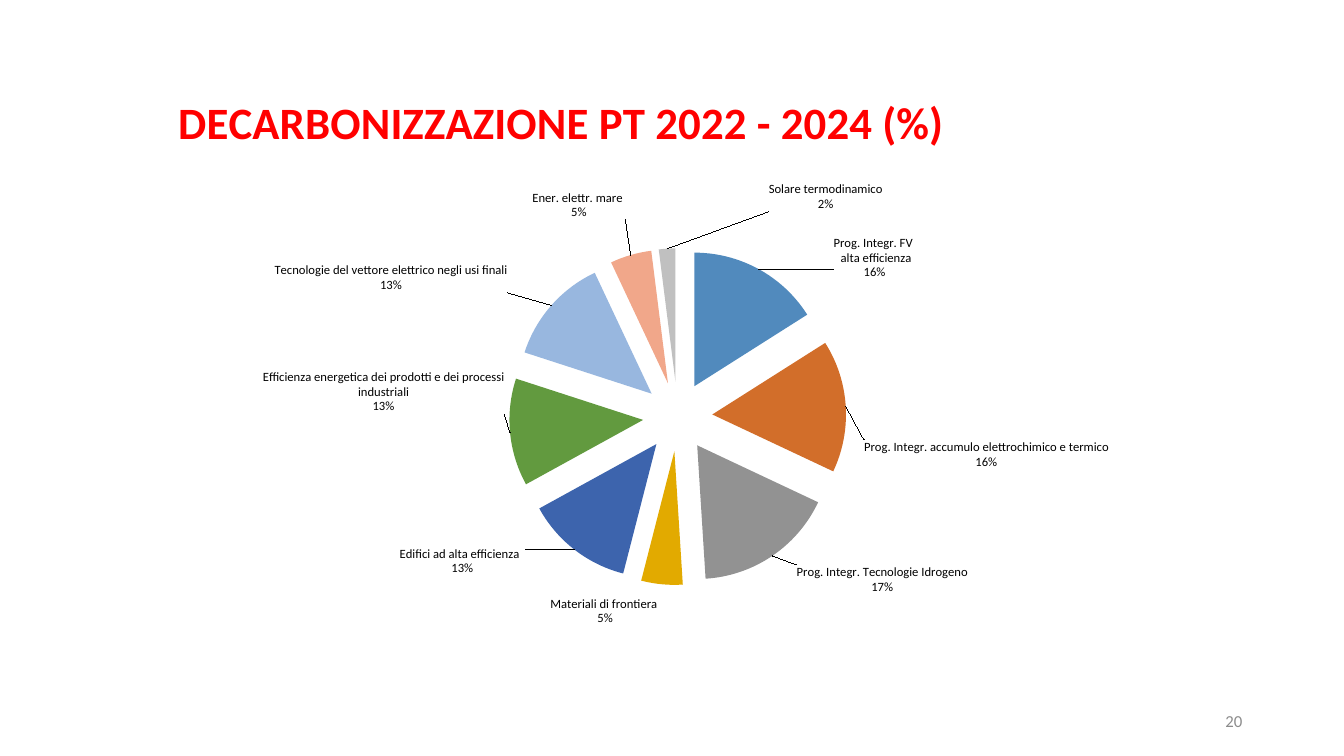
from lxml import etree
from pptx import Presentation
from pptx.chart.data import CategoryChartData
from pptx.dml.color import RGBColor
from pptx.enum.chart import XL_CHART_TYPE, XL_LABEL_POSITION
from pptx.enum.text import MSO_ANCHOR, PP_ALIGN
from pptx.oxml import parse_xml
from pptx.util import Inches, Pt

PIE, OUTER = XL_CHART_TYPE.PIE, XL_LABEL_POSITION.OUTSIDE_END
MIDDLE, RIGHT = MSO_ANCHOR.MIDDLE, PP_ALIGN.RIGHT
NS = "http://schemas.openxmlformats.org/drawingml/2006/chart"
FONT = "Calibri"


def style(font, size, color, bold=False):
    font.name, font.size, font.bold = FONT, Pt(size), bold
    font.color.rgb = RGBColor.from_string(color)


def place(node, spot, extra="", **shares):
    """Give a chart part a manual layout, in shares of the chart's size."""
    for old in node.findall(f"{{{NS}}}layout"):
        node.remove(old)
    sizes = "".join(f'<c:{k} val="{v}"/>' for k, v in shares.items())
    node.insert(spot, parse_xml(f'<c:layout xmlns:c="{NS}"><c:manualLayout>{extra}{sizes}'
                                '</c:manualLayout></c:layout>'))


# name, share, colour, label typed by hand, label shift
SLICES = [
    ("Prog. Integr. FV \n alta efficienza", 16, "518ABD", True, (0.058, 0.027)),
    ("Prog. Integr. accumulo elettrochimico e termico", 16, "D26E2A", True, (0.01, 0.083)),
    ("Prog. Integr. Tecnologie Idrogeno", 17, "929292", True, (0.017, 0.007)),
    ("Materiali di frontiera ", 5, "E2AA00", True, (-0.001, 0.011)),
    ("Edifici ad alta efficienza  ", 13, "3D64AD", True, (-0.037, -0.013)),
    ("Efficienza energetica dei prodotti e dei processi industriali", 13, "629A3F",
     False, (0, -0.107)),
    ("Tecnologie del vettore elettrico negli usi finali", 13, "98B7DF", True, (-0.032, -0.015)),
    ("Ener. elettr. mare ", 5, "F1A78A", True, (-0.003, -0.05)),
    ("Solare termodinamico", 2, "C0C0C0", False, (0.128, -0.053)),
]

deck = Presentation()
deck.slide_width, deck.slide_height = Inches(13.33), Inches(7.5)
slide = deck.slides.add_slide(deck.slide_layouts[6])

# Pie chart
data = CategoryChartData(number_format="0.00")
data.categories = [" ".join(s[0].split()) for s in SLICES]
data.add_series("Series 1", [s[1] for s in SLICES])
chart = slide.shapes.add_chart(PIE, Inches(0.37), Inches(0.66), Inches(12.31), Inches(5.84),
                               data).chart
chart.has_legend = False
style(chart.font, 10, "000000")

# Title and plot area
chart.has_title = True
title = chart.chart_title
title.text_frame.text = "DECARBONIZZAZIONE PT 2022 - 2024 (%)"
style(title.text_frame.paragraphs[0].runs[0].font, 32, "FF0000", True)
edge = '<c:xMode val="edge"/><c:yMode val="edge"/>'
place(title._element, 1, edge, x=0.107, y=0.028)
place(chart._chartSpace.chart.plotArea, 0, '<c:layoutTarget val="inner"/>' + edge,
      x=0.121, y=0.309, w=0.79, h=0.572)

# Slices and labels
plot = chart.plots[0]
plot.vary_by_categories = True
ring = plot.series[0]
burst = etree.Element(f"{{{NS}}}explosion", val="26")
ring._element.find(f"{{{NS}}}tx").addnext(burst)
for i, (name, share, color, typed, shift) in enumerate(SLICES):
    point = ring.points[i]
    point.format.fill.solid()
    point.format.fill.fore_color.rgb = RGBColor.from_string(color)
    point.format.line.fill.background()
    label = point.data_label
    if typed:
        label.text_frame.text = f"{name}\n{share}%"
        for para in label.text_frame.paragraphs:
            style(para.runs[0].font, 9, "000000")
    else:
        style(label.font, 9, "000000")
    label.position = OUTER

# Name and share in each label, moved off its slice
for node, item in zip(ring._element.iter(f"{{{NS}}}dLbl"), SLICES):
    place(node, 1, x=item[4][0], y=item[4][1])
    for flag, on in (("Val", 0), ("CatName", 1), ("Percent", 1)):
        node.find(f"{{{NS}}}show{flag}").set("val", str(on))
    gap = etree.SubElement(node, f"{{{NS}}}separator")
    gap.text = "\n"

# Page number
box = slide.shapes.add_textbox(Inches(9.42), Inches(6.95), Inches(3), Inches(0.4))
frame = box.text_frame
frame.word_wrap = True
frame.vertical_anchor = MIDDLE
para = frame.paragraphs[0]
para.text = "20"
para.alignment = RIGHT
style(para.font, 12, "8C8C8C")

deck.save("out.pptx")
